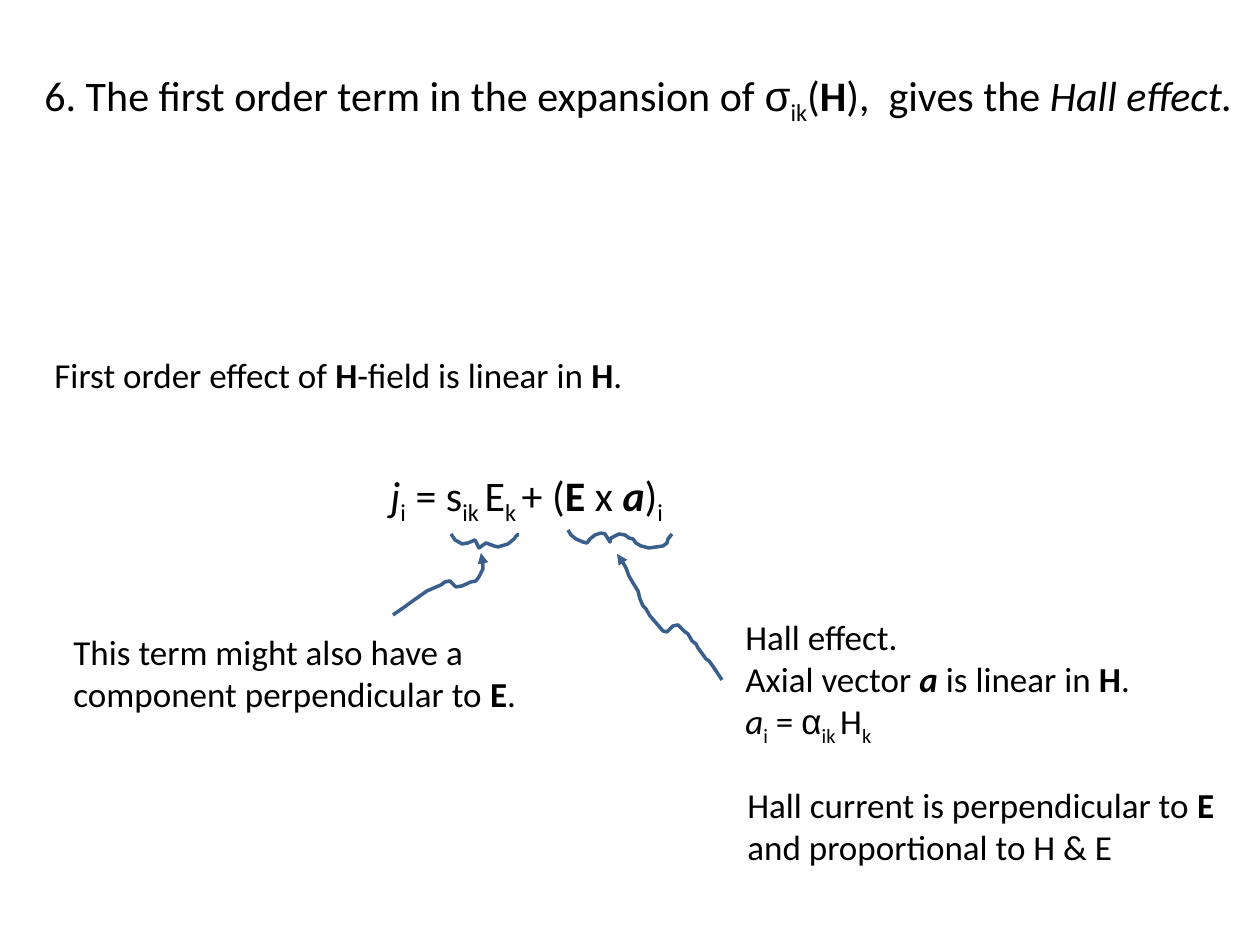
from dataclasses import dataclass

from lxml import etree
from pptx import Presentation
from pptx import util as u
from pptx.dml.color import RGBColor
from pptx.enum import text
from pptx.oxml.ns import qn

PX = 914400 / 126


@dataclass(frozen=True)
class Theme:
    ink: RGBColor = RGBColor(0, 0, 0)
    pen: RGBColor = RGBColor(0x3A, 0x5F, 0x8C)
    width: float = 2
    body: int = 20
    large: int = 24
    font: str = "Calibri"
    greek: str = "Arial"


THEME = Theme()


def px(n):
    return u.Emu(round(n * PX))


def add_run(para, words, marks, size):
    """Marks are letters: b bold, i italic, s subscript, g Greek font."""
    run = para.add_run()
    run.text = words
    font = run.font
    font.size = u.Pt(size)
    font.name = THEME.greek if "g" in marks else THEME.font
    font.color.rgb = THEME.ink
    font.bold = "b" in marks
    font.italic = "i" in marks
    if "s" in marks:
        run._r.get_or_add_rPr().set("baseline", "-25000")


def add_text(slide, box, *paras, size=THEME.body, wrap=True):
    """Each paragraph is a list of plain strings or (string, marks) pairs."""
    frame = slide.shapes.add_textbox(*map(px, box)).text_frame
    frame.word_wrap = wrap
    frame.auto_size = text.MSO_AUTO_SIZE.SHAPE_TO_FIT_TEXT
    for n, runs in enumerate(paras):
        para = frame.add_paragraph() if n else frame.paragraphs[0]
        for item in runs:
            words, marks = (item, "") if isinstance(item, str) else item
            add_run(para, words, marks, size)


def add_stroke(slide, points, arrow=False):
    start, *rest = points
    path = slide.shapes.build_freeform(*start, scale=PX)
    path.add_line_segments(rest, close=False)
    shape = path.convert_to_shape()
    shape.shadow.inherit = False
    shape.fill.background()
    shape.line.color.rgb = THEME.pen
    shape.line.width = u.Pt(THEME.width)
    if arrow:
        line = shape._element.spPr.find(qn("a:ln"))
        etree.SubElement(line, qn("a:tailEnd"), type="triangle")


def add_braces(slide):
    add_stroke(slide, [
        (451, 534), (455, 540), (462, 544), (468, 543), (475, 540),
        (477, 544), (479, 548), (486, 543), (494, 546), (498, 547),
        (508, 544), (514, 539), (517, 535), (519, 535)])
    add_stroke(slide, [
        (568, 530), (571, 535), (576, 539), (583, 542), (587, 543),
        (590, 539), (595, 535), (601, 533), (605, 534), (610, 542),
        (611, 538), (619, 534), (625, 535), (629, 538), (633, 539),
        (636, 543), (641, 546), (649, 548), (663, 546), (667, 543),
        (668, 539), (672, 534)])


def add_arrows(slide):
    add_stroke(slide, [
        (393, 615), (406, 606), (410, 603), (427, 591), (434, 588),
        (441, 585), (445, 582), (450, 581), (456, 587), (462, 586),
        (471, 582), (476, 581), (479, 577), (483, 569), (483, 557),
        (481, 553)], arrow=True)
    add_stroke(slide, [
        (722, 680), (712, 665), (709, 661), (706, 659), (698, 648),
        (696, 644), (692, 641), (688, 634), (684, 631), (678, 625),
        (673, 626), (667, 632), (663, 631), (650, 616), (646, 609),
        (643, 606), (640, 599), (638, 591), (633, 583), (629, 576),
        (626, 568), (622, 561), (617, 554)], arrow=True)


def add_notes(slide):
    add_text(slide, (42, 347, 600, 55),
             ["First order effect of ", ("H", "b"), "-field is linear in ",
              ("H", "b"), "."], wrap=False)
    add_text(slide, (61, 624, 473, 97),
             ["This term might also have a component perpendicular to ",
              ("E", "b"), "."])
    add_text(slide, (733, 609, 413, 140),
             ["Hall effect."],
             ["Axial vector ", ("a", "bi"), " is linear in ", ("H", "b"), "."],
             [("a", "i"), ("i", "s"), " = ", ("α", "g"), ("ik ", "s"), "H",
              ("k", "s")], wrap=False)
    add_text(slide, (735, 777, 501, 97),
             ["Hall current is perpendicular to ", ("E", "b"),
              " and proportional to H & E"])


def main():
    deck = Presentation()
    deck.slide_width, deck.slide_height = px(1260), px(945)
    slide = deck.slides.add_slide(deck.slide_layouts[6])
    add_text(slide, (32, 63, 1218, 63),
             ["6. The first order term in the expansion of ", ("σ", "g"),
              ("ik", "s"), "(", ("H", "b"), "),  gives the ",
              ("Hall effect.", "i")], size=THEME.large)
    add_notes(slide)
    add_text(slide, (378, 463, 311, 63),
             [("j", "i"), ("i", "s"), " = s", ("ik ", "s"), "E", ("k ", "s"),
              "+ (", ("E", "b"), " x ", ("a", "bi"), ")", ("i", "s")],
             size=THEME.large, wrap=False)
    add_braces(slide)
    add_arrows(slide)
    deck.save("out.pptx")


if __name__ == "__main__":
    main()
